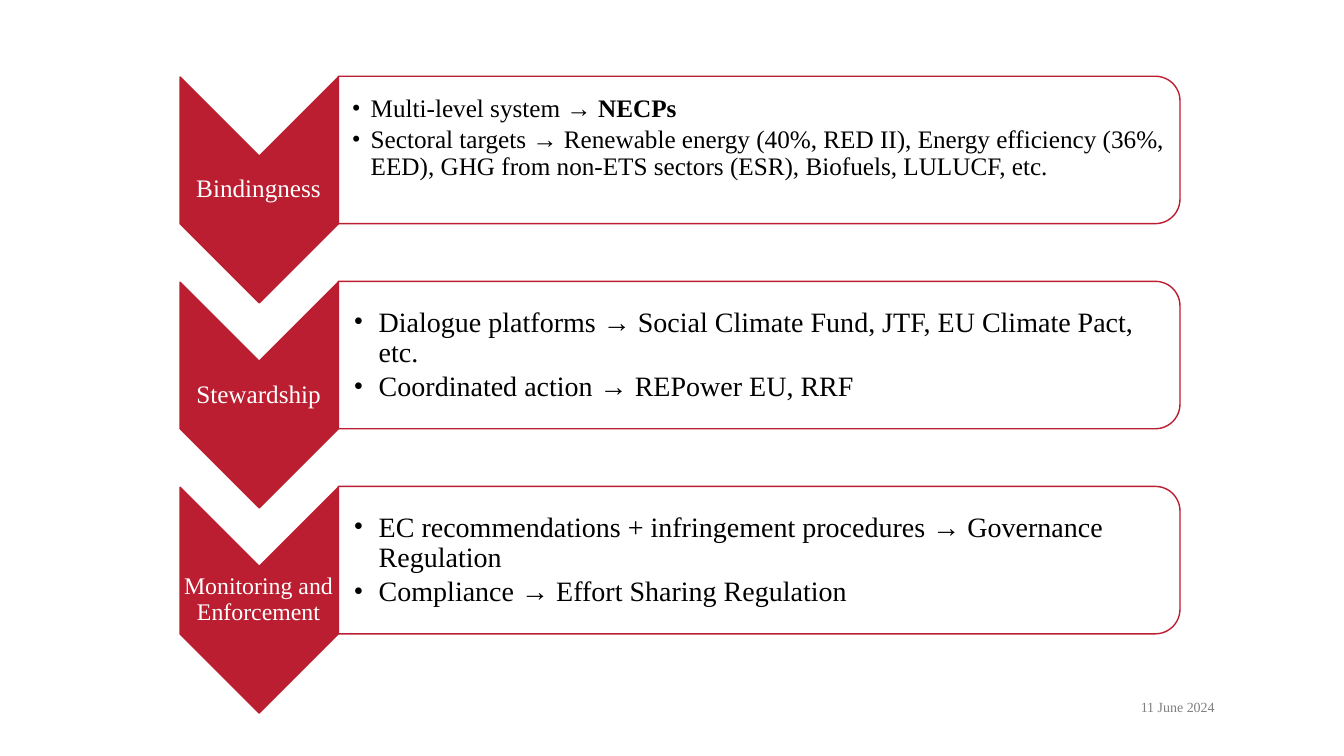
from lxml.etree import SubElement
from pptx import Presentation
from pptx.dml.color import RGBColor
from pptx.enum.shapes import MSO_SHAPE
from pptx.enum.text import MSO_ANCHOR, PP_ALIGN
from pptx.oxml.ns import qn
from pptx.util import Pt

RED = RGBColor(0xBC, 0x1E, 0x31)
WHITE = RGBColor(0xFF, 0xFF, 0xFF)
BLACK = RGBColor(0, 0, 0)
GREY = RGBColor(0x80, 0x80, 0x80)
PITCH = 146.5  # distance from one row to the next

# Label, label size, text size, indent, left and bottom inset, bullets;
# each bullet is a list of (text, bold) runs
ROWS = [
    ("Bindingness", 18, 18, 13.5, 10, 18, [
        [("Multi-level system → ", False), ("NECPs", True)],
        [("Sectoral targets → Renewable energy (40%, RED II), Energy "
          "efficiency (36%, EED), GHG from non-ETS sectors (ESR), "
          "Biofuels, LULUCF, etc.", False)]]),
    ("Stewardship", 18, 20, 18, 11.2, 0.9, [
        [("Dialogue platforms → Social Climate Fund, JTF, "
          "EU Climate Pact, etc.", False)],
        [("Coordinated action → REPower EU, RRF", False)]]),
    ("Monitoring and Enforcement", 17, 20, 18, 11.2, 0.9, [
        [("EC recommendations + infringement procedures → "
          "Governance Regulation", False)],
        [("Compliance → Effort Sharing Regulation", False)]]),
]


def apply(item, values):
    for name, value in values.items():
        setattr(item, name, value)


def add_block(slide, kind, box, fill):
    """Add an outlined shape turned a quarter clockwise."""
    block = slide.shapes.add_shape(kind, *map(Pt, box))
    block.rotation = 90
    block.shadow.inherit = False
    block.fill.solid()
    block.fill.fore_color.rgb = fill
    block.line.color.rgb = RED
    block.line.width = Pt(1)


def add_frame(slide, box, left=0.9, bottom=0.9):
    frame = slide.shapes.add_textbox(*map(Pt, box)).text_frame
    apply(frame, {
        "word_wrap": True, "vertical_anchor": MSO_ANCHOR.MIDDLE,
        "margin_left": Pt(left), "margin_right": Pt(0.9),
        "margin_top": Pt(0.9), "margin_bottom": Pt(bottom)})
    return frame


def add_run(para, text, size, color, bold=False):
    run = para.add_run()
    run.text = text
    apply(run.font, {"name": "Times New Roman", "size": Pt(size),
                     "bold": bold})
    run.font.color.rgb = color


def add_line(slide, box, text, size, color, align):
    para = add_frame(slide, box).paragraphs[0]
    apply(para, {"alignment": align, "line_spacing": 0.9})
    add_run(para, text, size, color)


def add_list(slide, box, items, size, indent, left, bottom):
    frame = add_frame(slide, box, left, bottom)
    for i, runs in enumerate(items):
        para = frame.add_paragraph() if i else frame.paragraphs[0]
        props = para._p.get_or_add_pPr()
        props.set("marL", str(Pt(indent)))
        props.set("indent", str(-Pt(indent)))
        SubElement(props, qn("a:buFont"), typeface="Times New Roman")
        SubElement(props, qn("a:buChar"), char="•")
        apply(para, {"alignment": PP_ALIGN.LEFT, "line_spacing": 0.9,
                     "space_after": Pt(size * 0.15)})
        for text, bold in runs:
            add_run(para, text, size, BLACK, bold)


def add_row(slide, top, row):
    label, small, size, indent, left, bottom, items = row
    # Arrow with its label
    add_block(slide, MSO_SHAPE.CHEVRON, (104.5, top + 79.2, 161.3, 113), RED)
    add_line(slide, (128.2, top + 111.5, 113, 48.2), label, small, WHITE,
             PP_ALIGN.CENTER)
    # Panel with its bullets
    add_block(slide, MSO_SHAPE.ROUND_2_SAME_RECTANGLE,
              (489.6, top - 193.5, 105.3, 601.2), WHITE)
    add_list(slide, (241.3, top + 59.8, 596.2, 95), items, size, indent,
             left, bottom)


def main():
    deck = Presentation()
    apply(deck, {"slide_width": Pt(960), "slide_height": Pt(540)})
    slide = deck.slides.add_slide(deck.slide_layouts[6])
    for i, row in enumerate(ROWS):
        add_row(slide, i * PITCH, row)
    # Date
    add_line(slide, (763.2, 499.7, 105.3, 12.2), "11 June 2024", 10, GREY,
             PP_ALIGN.RIGHT)
    deck.save("out.pptx")


if __name__ == "__main__":
    main()
